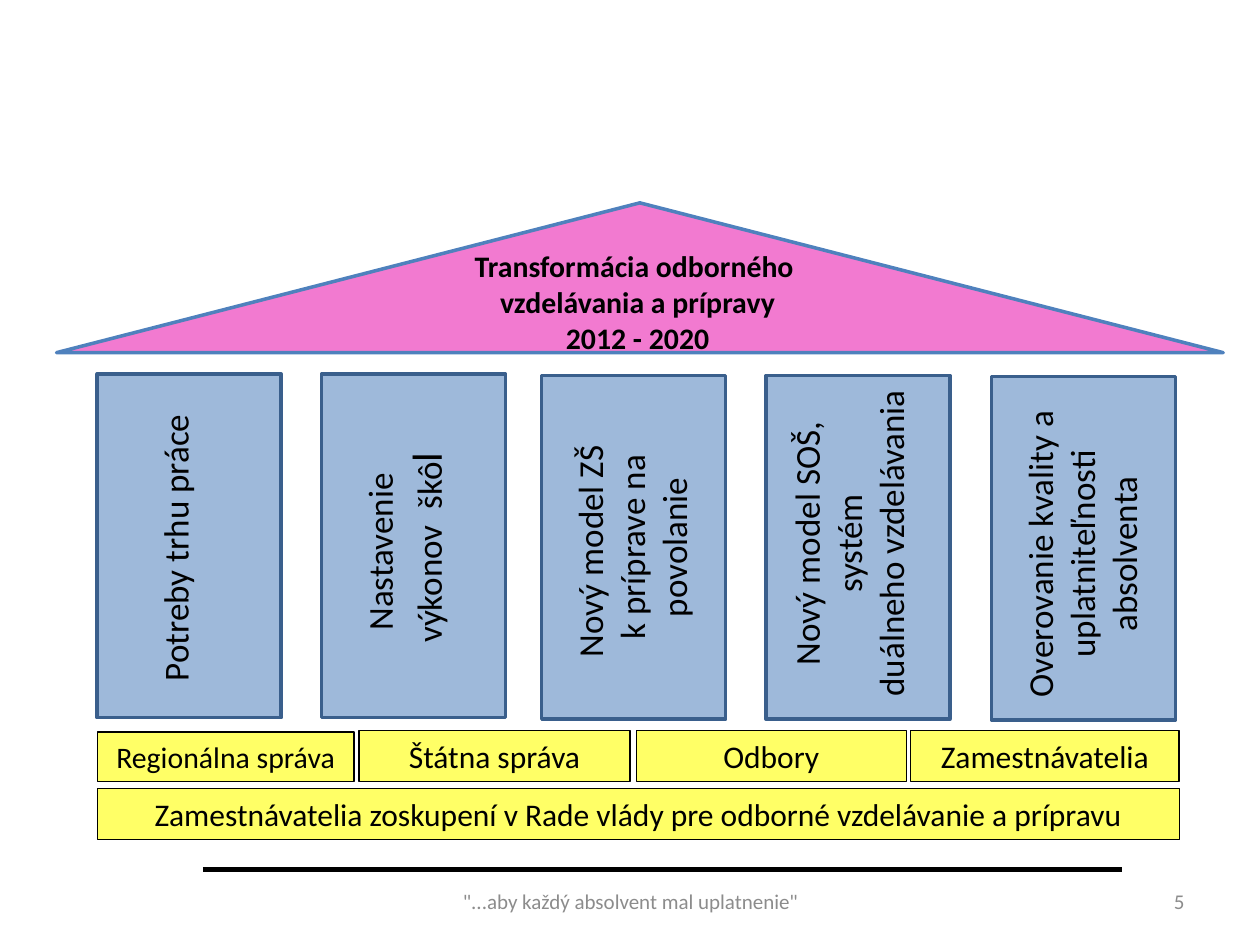
import lxml.etree
import pptx
import pptx.dml.color
import pptx.enum.shapes
import pptx.enum.text
import pptx.oxml.ns
import pptx.util
from pptx.util import Cm

COLOURS = {
    "text": "000000",
    "footer": "8C8C8C",
    "roof": "F27AD0",
    "roof edge": "4F81BD",
    "pillar": "9EB9DA",
    "pillar edge": "3A5F8C",
    "brick": "FFFF66",
}
FONT = "Calibri"
SHAPES = pptx.enum.shapes.MSO_SHAPE
ALIGN = pptx.enum.text.PP_ALIGN
ANCHOR = pptx.enum.text.MSO_ANCHOR

PILLAR_WIDTH, PILLAR_HEIGHT = 3.71, 6.93
# Pillar left and top, label box, label paragraphs as (text, size) runs
PILLARS = [
    (1.96, 7.54, (2.97, 7.77, 1.37, 6.55), [[("Potreby trhu práce", 20)]]),
    (6.48, 7.54, (7.09, 7.77, 2.39, 6.55),
     [[("Nastavenie ", 20)], [("výkonov  škô", 20), ("l", 24)]]),
    (10.92, 7.57, (11.33, 7.57, 3.07, 6.93),
     [[("Nový model ZŠ ", 20)], [("k príprave na povolanie", 20)]]),
    (15.44, 7.57, (15.7, 7.59, 3.07, 6.73),
     [[("Nový model SOŠ,", 20)], [("systém", 20)], [("duálneho vzdelávania", 20)]]),
    (19.99, 7.59, (20.4, 7.65, 3.07, 7.04),
     [[("Overovanie kvality a uplatniteľnosti absolventa", 20)]]),
]
BRICKS = [
    ((1.96, 14.76, 5.18, 0.99), "Regionálna správa", 17),
    ((7.24, 14.73, 5.46, 1.02), "Štátna správa", 18),
    ((12.83, 14.73, 5.44, 1.02), "Odbory", 18),
    ((18.36, 14.73, 5.41, 1.02), "Zamestnávatelia", 18),
    ((1.96, 15.9, 21.82, 1.02),
     "Zamestnávatelia zoskupení v Rade vlády pre odborné vzdelávanie a prípravu", 18),
]


def rgb(name):
    return pptx.dml.color.RGBColor.from_string(COLOURS[name])


def write(shape, paragraphs, colour="text", bold=False, align=ALIGN.CENTER,
          anchor=ANCHOR.TOP):
    """Fill a shape with paragraphs, each a list of (text, size) runs."""
    frame = shape.text_frame
    frame.word_wrap = True
    frame.vertical_anchor = anchor
    for index, runs in enumerate(paragraphs):
        para = frame.add_paragraph() if index else frame.paragraphs[0]
        para.alignment = align
        for text, size in runs:
            span = para.add_run()
            span.text = text
            span.font.name = FONT
            span.font.size = pptx.util.Pt(size)
            span.font.bold = bold
            span.font.color.rgb = rgb(colour)


def add_block(page, kind, place, fill, edge, weight):
    block = page.shapes.add_shape(kind, *map(Cm, place))
    block.shadow.inherit = False
    block.fill.solid()
    block.fill.fore_color.rgb = rgb(fill)
    block.line.color.rgb = rgb(edge)
    block.line.width = pptx.util.Pt(weight)
    return block


def add_text(page, place, paragraphs, upward=False, **style):
    """Add a text box; upward turns it to read from bottom to top."""
    box = page.shapes.add_textbox(*map(Cm, place))
    write(box, paragraphs, **style)
    if upward:
        box.text_frame._txBody.bodyPr.set("vert", "vert270")


def add_rule(page, left, right, top):
    rule = page.shapes.add_connector(
        pptx.enum.shapes.MSO_CONNECTOR.STRAIGHT, Cm(left), Cm(top), Cm(right), Cm(top))
    rule.line.color.rgb = rgb("text")
    rule.line.width = pptx.util.Pt(2.5)
    lxml.etree.SubElement(rule._element.spPr, pptx.oxml.ns.qn("a:effectLst"))


def add_roof(page):
    add_block(page, SHAPES.ISOSCELES_TRIANGLE, (1.14, 4.09, 23.52, 3.02),
              "roof", "roof edge", 2)
    lines = ["Transformácia odborného ", "vzdelávania a prípravy", "2012 - 2020"]
    add_text(page, (5.11, 4.88, 15.49, 3.3), [[(line, 17)] for line in lines], bold=True)


def add_footer(page):
    add_rule(page, 4.09, 22.61, 17.53)
    add_text(page, (8.69, 17.65, 8.05, 1.02),
             [[('"...aby každý absolvent mal uplatnenie"', 12)]],
             colour="footer", anchor=ANCHOR.MIDDLE)
    add_text(page, (18.21, 17.65, 5.92, 1.02), [[("5", 12)]],
             colour="footer", align=ALIGN.RIGHT, anchor=ANCHOR.MIDDLE)


def main():
    deck = pptx.Presentation()
    deck.slide_width, deck.slide_height = Cm(25.4), Cm(19.05)
    page = deck.slides.add_slide(deck.slide_layouts[6])
    add_roof(page)
    for left, top, label_place, label in PILLARS:
        add_block(page, SHAPES.RECTANGLE, (left, top, PILLAR_WIDTH, PILLAR_HEIGHT),
                  "pillar", "pillar edge", 2)
        add_text(page, label_place, label, upward=True)
    for place, text, size in BRICKS:
        brick = add_block(page, SHAPES.RECTANGLE, place, "brick", "text", 0.75)
        write(brick, [[(text, size)]])
    add_footer(page)
    deck.save("out.pptx")


if __name__ == "__main__":
    main()
